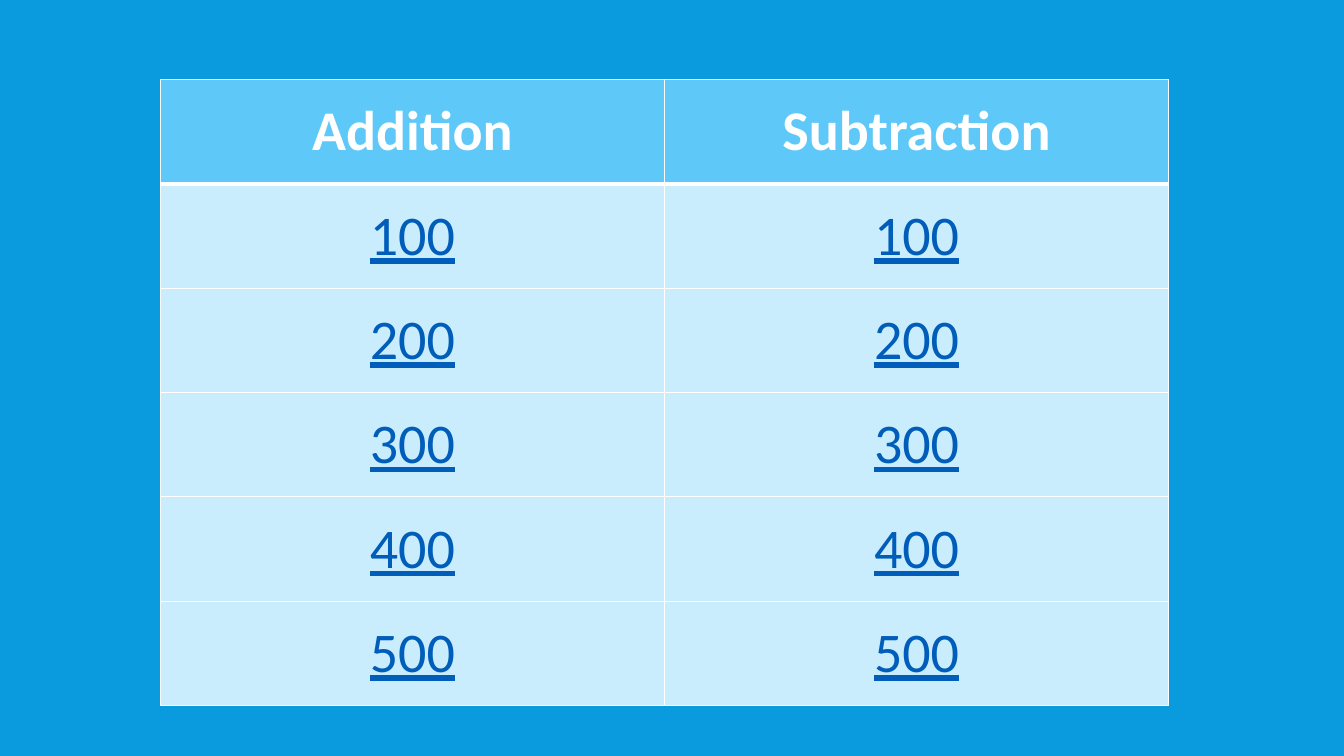
"""Build a quiz board slide with point values for addition and subtraction."""
from lxml import etree
from pptx import Presentation
from pptx import util as u
from pptx.dml.color import RGBColor
from pptx.enum import text
from pptx.oxml.ns import qn

CATEGORIES = ["Addition", "Subtraction"]
POINTS = ["100", "200", "300", "400", "500"]
BOARD = {"left": 1.59, "top": 0.79, "width": 10, "height": 6.21}
BACKGROUND, HEADER, BODY = "099BDD", "5EC8F8", "C9EDFD"
WHITE, LINK_BLUE = "FFFFFF", "005DBA"
THIN, THICK = 1, 3


def color(value):
    return RGBColor.from_string(value)


def paint(fill, value):
    fill.solid()
    fill.fore_color.rgb = color(value)


def write(cell, words, size=40, ink=LINK_BLUE, bold=False, underline=False):
    cell.vertical_anchor = text.MSO_ANCHOR.MIDDLE
    paragraph = cell.text_frame.paragraphs[0]
    paragraph.alignment = text.PP_ALIGN.CENTER
    run = paragraph.add_run()
    run.text = words
    run.font.name = "Calibri"
    run.font.size = u.Pt(size)
    run.font.color.rgb = color(ink)
    run.font.bold = bold
    run.font.underline = underline


def add_borders(cell, top, bottom):
    properties = cell._tc.get_or_add_tcPr()
    for side, width in (("L", THIN), ("R", THIN), ("T", top), ("B", bottom)):
        line = etree.SubElement(properties, qn(f"a:ln{side}"), w=str(u.Pt(width)))
        fill = etree.SubElement(line, qn("a:solidFill"))
        etree.SubElement(fill, qn("a:srgbClr"), val=WHITE)


def add_board(slide):
    rows = [CATEGORIES] + [[points] * len(CATEGORIES) for points in POINTS]
    frame = slide.shapes.add_table(
        len(rows), len(CATEGORIES), *(u.Inches(length) for length in BOARD.values()))
    table = frame.table
    for row_index, row in enumerate(rows):
        header = row_index == 0
        for column_index, words in enumerate(row):
            cell = table.cell(row_index, column_index)
            add_borders(cell, top=THICK if row_index == 1 else THIN,
                        bottom=THICK if header else THIN)
            paint(cell.fill, HEADER if header else BODY)
            write(cell, words, ink=WHITE if header else LINK_BLUE,
                  bold=header, underline=not header)


def main():
    presentation = Presentation()
    presentation.slide_width = u.Inches(13.33)
    presentation.slide_height = u.Inches(7.5)
    slide = presentation.slides.add_slide(presentation.slide_layouts[6])
    paint(slide.background.fill, BACKGROUND)
    add_board(slide)
    presentation.save("out.pptx")


if __name__ == "__main__":
    main()
